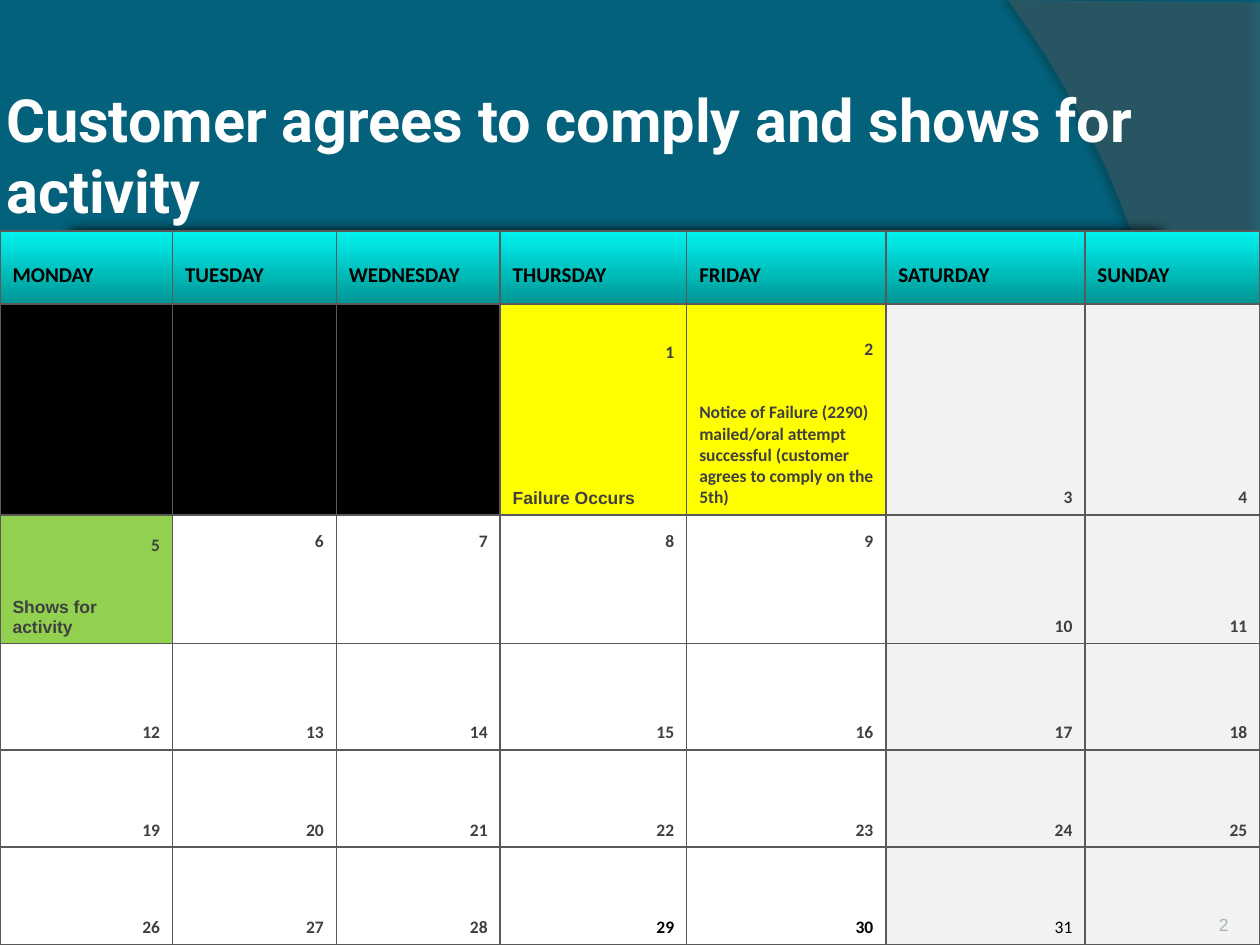
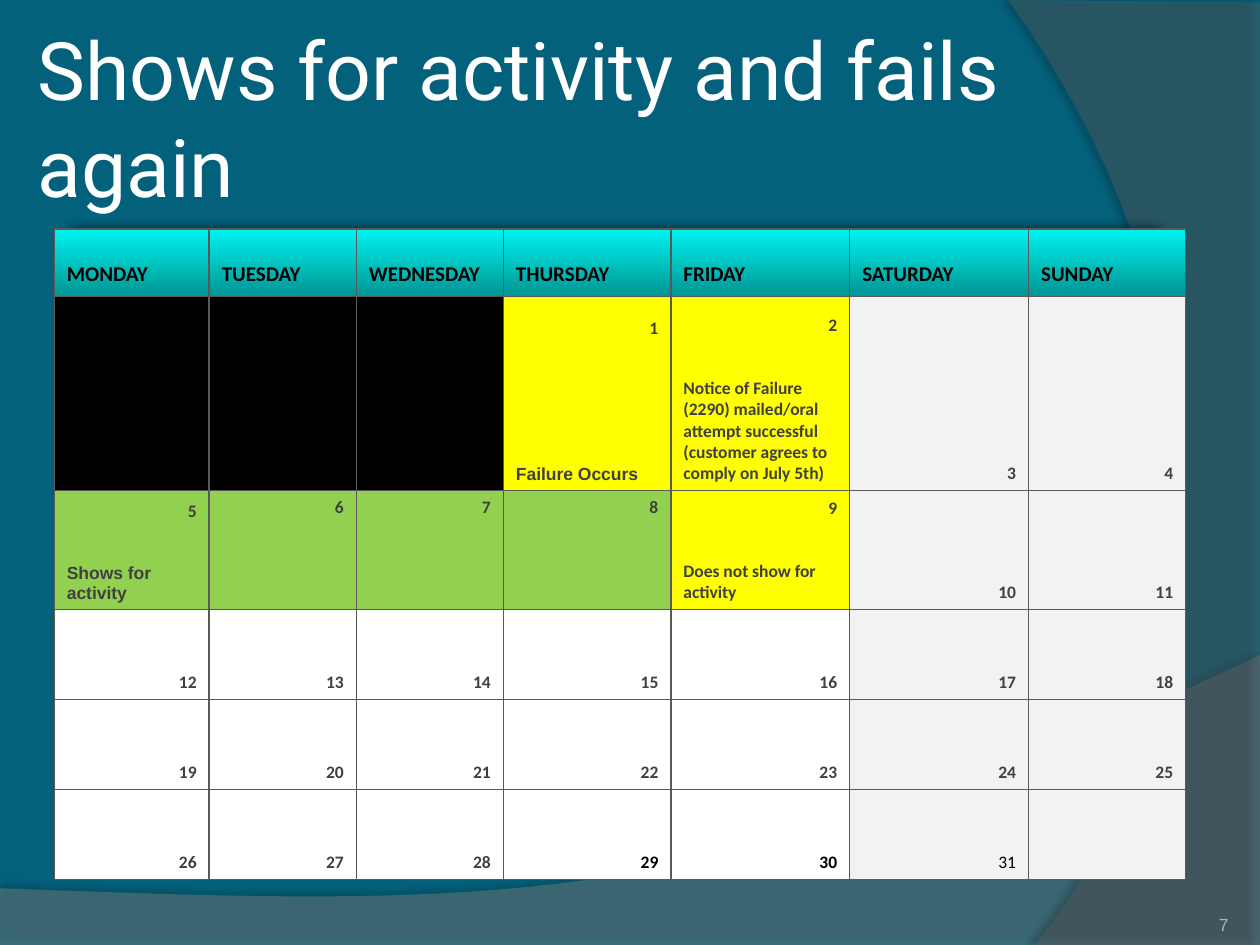
from lxml import etree
from pptx import Presentation
from pptx.dml.color import RGBColor
from pptx.enum import shapes, text
from pptx.oxml import ns
from pptx.util import Pt

TEAL = RGBColor(0x04, 0x61, 0x7B)
WAVE_GRAY = RGBColor(0x7F, 0x7F, 0x7F)
ARC_GRAY = RGBColor(0x5E, 0x5E, 0x5E)
HEADER_TOP = RGBColor(0x00, 0xF3, 0xF0)
HEADER_BOTTOM = RGBColor(0x00, 0x95, 0x93)
YELLOW = RGBColor(0xFF, 0xFF, 0x00)
GREEN = RGBColor(0x92, 0xD0, 0x50)
WEEKEND = RGBColor(0xF2, 0xF2, 0xF2)
WHITE = RGBColor(0xFF, 0xFF, 0xFF)
BLACK = RGBColor(0, 0, 0)
INK = RGBColor(0x40, 0x40, 0x40)
GRID = RGBColor(0x59, 0x59, 0x59)
NUMBER_GRAY = RGBColor(0xA2, 0xB5, 0xB8)

WEEKDAYS = ["MONDAY", "TUESDAY", "WEDNESDAY", "THURSDAY", "FRIDAY", "SATURDAY", "SUNDAY"]
COLUMN_WIDTHS = [98.6, 93.6, 93.6, 106.6, 113.8, 113.8, 100]
FIRST_COLUMN = 3  # the month starts on a Thursday
LAST_DAY = 31
RAISED_DAYS = range(6, 10)  # dates that stand high in their cells


def add_xml(parent, tag, **attributes):
    return etree.SubElement(parent, ns.qn(tag), {k: str(v) for k, v in attributes.items()})


def add_color(parent, color, alpha=None):
    node = add_xml(parent, "a:srgbClr", val=color)
    if alpha is not None:
        add_xml(node, "a:alpha", val=alpha * 1000)


def add_effect(shape, tag, **attributes):
    shape.shadow.inherit = False
    effects = shape._element.spPr.find(ns.qn("a:effectLst"))
    return add_xml(effects, tag, **attributes)


def curve(start, control1, control2, end, steps=40):
    """Points of a cubic curve, without its start."""
    points = []
    for step in range(1, steps + 1):
        t = step / steps
        weights = ((1 - t) ** 3, 3 * t * (1 - t) ** 2, 3 * t * t * (1 - t), t ** 3)
        points.append(tuple(sum(w * p[axis] for w, p in zip(weights, (start, control1, control2, end)))
                            for axis in (0, 1)))
    return points


def add_swoosh(page, points, color, alpha, shadow_alpha, distance, direction):
    """Translucent outline with a soft shadow."""
    points = [(Pt(x), Pt(y)) for x, y in points]
    builder = page.shapes.build_freeform(*points[0], scale=1.0)
    builder.add_line_segments(points[1:], close=True)
    swoosh = builder.convert_to_shape()
    swoosh.fill.solid()
    swoosh.fill.fore_color.rgb = color
    fill_color = swoosh._element.spPr.find(ns.qn("a:solidFill"))[0]
    add_xml(fill_color, "a:alpha", val=alpha * 1000)
    swoosh.line.fill.background()
    shadow = add_effect(swoosh, "a:outerShdw", blurRad=Pt(4), dist=Pt(distance),
                        dir=direction * 60000, algn="ctr", rotWithShape=0)
    add_color(shadow, BLACK, shadow_alpha)


def add_backdrop(page):
    page.background.fill.solid()
    page.background.fill.fore_color.rgb = TEAL
    wave = [(0, 507.6), (0, 540.7), (720, 540.7), (720, 374.4)]
    wave += curve(wave[-1], (402.5, 524.9), (281.5, 517.7), wave[0])
    add_swoosh(page, wave, WAVE_GRAY, 45, 35, 3.5, 270)
    arc = [(720, 1.4), (720, 540), (591.1, 540)]
    arc += curve(arc[-1], (673.2, 445.7), (733, 216), (576, 0))
    add_swoosh(page, arc, ARC_GRAY, 40, 45, 4, 180)

    panel = page.shapes.add_shape(shapes.MSO_SHAPE.RECTANGLE, Pt(29.5), Pt(121.7), Pt(645.8), Pt(334.8))
    panel.fill.solid()
    panel.fill.fore_color.rgb = BLACK
    panel.line.fill.background()
    add_effect(panel, "a:softEdge", rad=Pt(9))


def write(para, content, size=10, font="Calibri", color=INK, bold=True,
          align=text.PP_ALIGN.LEFT, before=0):
    para.alignment = align
    para.space_before = Pt(before)
    span = para.add_run()
    span.text = content
    span.font.size = Pt(size)
    span.font.name = font
    span.font.color.rgb = color
    span.font.bold = bold


def add_text(page, content, left, top, width, height, anchor, inset=0, **style):
    box = page.shapes.add_textbox(Pt(left), Pt(top), Pt(width), Pt(height))
    frame = box.text_frame
    frame.word_wrap = True
    frame.vertical_anchor = anchor
    frame.margin_left = frame.margin_right = frame.margin_top = frame.margin_bottom = Pt(inset)
    write(frame.paragraphs[0], content, **style)


def add_borders(cell):
    properties = cell._tc.get_or_add_tcPr()
    for side in "LRTB":
        line = add_xml(properties, f"a:ln{side}", w=Pt(1))
        add_color(add_xml(line, "a:solidFill"), GRID)


def fill_header(cell, weekday):
    cell.fill.gradient()
    cell.fill.gradient_angle = 270
    for stop, color in zip(cell.fill.gradient_stops, (HEADER_TOP, HEADER_BOTTOM)):
        stop.color.rgb = color
    cell.margin_top = Pt(18.2)
    write(cell.text_frame.paragraphs[0], weekday, size=12, color=BLACK)


def fill_day(cell, day, column, color, note):
    """Date at the right; note is (lines, font, gap above) or None."""
    cell.fill.solid()
    if day < 1:
        cell.fill.fore_color.rgb = BLACK
        return
    cell.fill.fore_color.rgb = color or (WEEKEND if column > 4 else WHITE)
    if day > LAST_DAY:
        return
    cell.vertical_anchor = text.MSO_ANCHOR.BOTTOM
    frame = cell.text_frame
    write(frame.paragraphs[0], str(day), color=BLACK if day > 28 else INK,
          bold=day < LAST_DAY, align=text.PP_ALIGN.RIGHT)
    if note:
        lines, font, gap = note
        for index, line in enumerate(lines):
            write(frame.add_paragraph(), line, font=font, before=0 if index else gap)
    elif day in RAISED_DAYS:
        cell.margin_bottom = Pt(52)


def add_calendar(page, left, top, width, row_heights, colors, notes):
    scale = width / sum(COLUMN_WIDTHS)
    table = page.shapes.add_table(len(row_heights), len(WEEKDAYS), Pt(left), Pt(top),
                                  Pt(width), Pt(sum(row_heights))).table
    table.first_row = table.horz_banding = False
    for column, base in zip(table.columns, COLUMN_WIDTHS):
        column.width = Pt(base * scale)
    for row, height in enumerate(row_heights):
        table.rows[row].height = Pt(height)
        for column, weekday in enumerate(WEEKDAYS):
            cell = table.cell(row, column)
            add_borders(cell)
            if row == 0:
                fill_header(cell, weekday)
            else:
                day = (row - 1) * 7 + column - FIRST_COLUMN + 1
                fill_day(cell, day, column, colors.get(day), notes.get(day))


def add_page(deck, number, title, title_box, title_style, calendar):
    page = deck.slides.add_slide(deck.slide_layouts[6])
    add_backdrop(page)
    add_calendar(page, **calendar)
    add_text(page, title, *title_box, text.MSO_ANCHOR.MIDDLE, inset=3.6,
             font="Roboto", color=WHITE, **title_style)
    add_text(page, str(number), 642.2, 505.4, 59.8, 28.8, text.MSO_ANCHOR.BOTTOM,
             font="Arial", color=NUMBER_GRAY, bold=False, align=text.PP_ALIGN.RIGHT)


def month_notes(deadline):
    notice = ("Notice of Failure (2290) mailed/oral attempt successful "
              f"(customer agrees to comply on {deadline})")
    return {
        1: (["Failure Occurs"], "Arial", 72),
        2: ([notice], "Calibri", 24),
        5: (["Shows for", "activity"], "Arial", 24),
    }


def main():
    deck = Presentation()
    deck.slide_width, deck.slide_height = Pt(720), Pt(540)
    colors = {1: YELLOW, 2: YELLOW, 5: GREEN}

    add_page(deck, 2, "Customer agrees to comply and shows for activity",
             (0, 54, 720, 68.4), dict(size=34, bold=True),
             dict(left=0, top=132, width=720, row_heights=[41.8, 120.4, 73.6, 60.8, 55.6, 55.6],
                  colors=colors, notes=month_notes("the 5th")))

    missed = (["Does not show for activity"], "Calibri", 24)
    add_page(deck, 7, "Shows for activity and fails again",
             (18, 21.6, 666, 90), dict(size=46, bold=False),
             dict(left=31, top=131, width=646.6, row_heights=[38.5, 110.9, 68, 51.4, 51.4, 51.4],
                  colors={**colors, 6: GREEN, 7: GREEN, 8: GREEN, 9: YELLOW},
                  notes={**month_notes("July 5th"), 9: missed}))

    deck.save("out.pptx")


if __name__ == "__main__":
    main()
